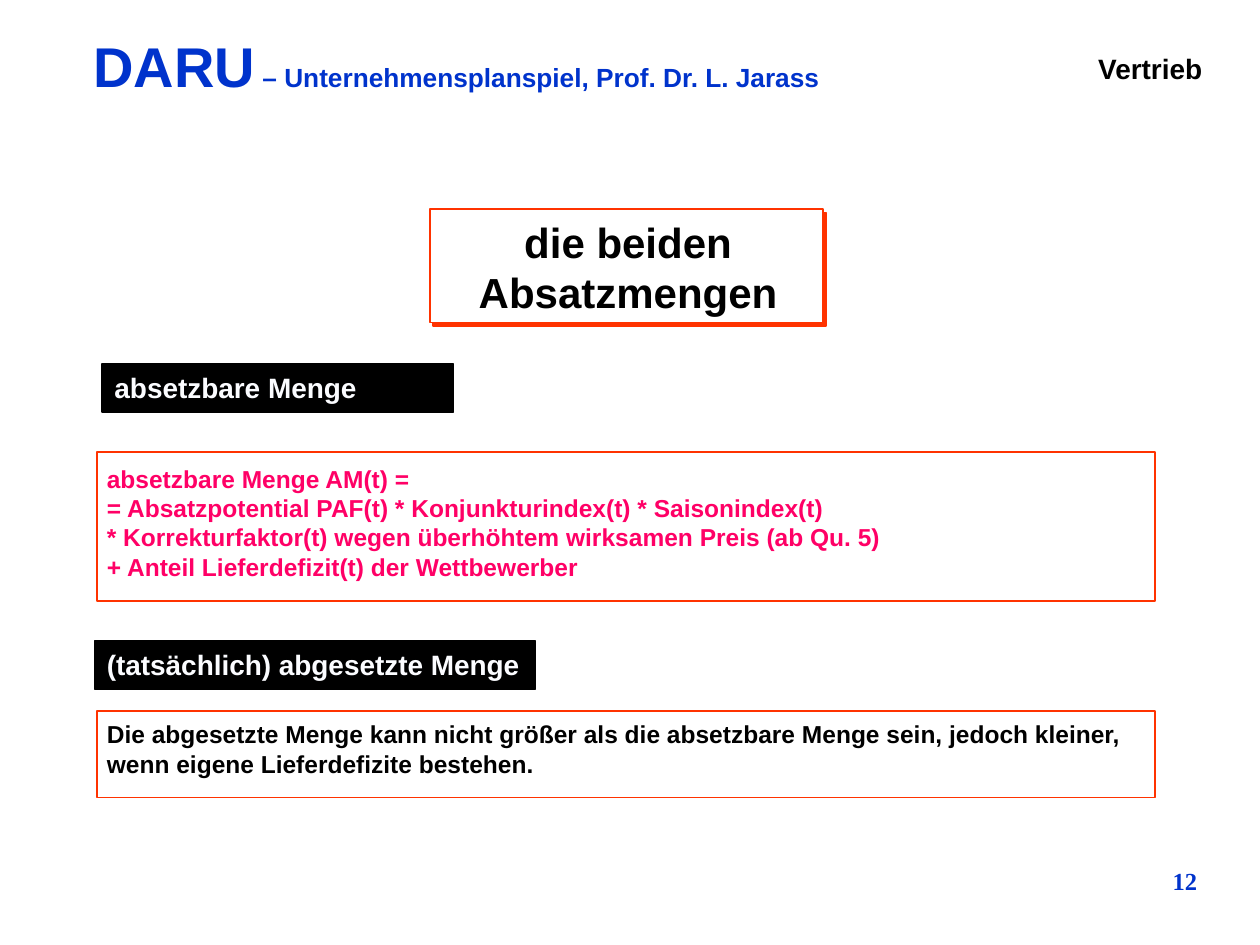
from dataclasses import dataclass

import pptx
import pptx.dml.color
import pptx.enum.shapes
import pptx.enum.text
import pptx.oxml
import pptx.oxml.ns
import pptx.util
from pptx.util import Inches

ALIGN = pptx.enum.text.PP_ALIGN
ANCHOR = pptx.enum.text.MSO_ANCHOR


@dataclass(frozen=True)
class Theme:
    blue: str = "0033CC"
    orange: str = "FF3300"
    pink: str = "FF0066"
    black: str = "000000"
    white: str = "FFFFFF"
    label_text: str = "FBFCFF"
    sans: str = "Arial"
    serif: str = "Times New Roman"
    title: int = 32
    heading: int = 24
    label: int = 16
    subtitle: int = 15
    body: int = 14


theme = Theme()


def add_rectangle(left, top, width, height, fill, line):
    shape = slide.shapes.add_shape(
        pptx.enum.shapes.MSO_SHAPE.RECTANGLE,
        Inches(left), Inches(top), Inches(width), Inches(height))
    shape.shadow.inherit = False
    shape.fill.solid()
    shape.fill.fore_color.rgb = pptx.dml.color.RGBColor.from_string(fill)
    shape.line.color.rgb = pptx.dml.color.RGBColor.from_string(line)
    shape.line.width = pptx.util.Pt(1)
    return shape


def write_text(shape, paragraphs, size, color, align=ALIGN.LEFT,
               font=theme.sans, anchor=ANCHOR.TOP):
    """Fill a shape with bold paragraphs; a newline inside one is a line break."""
    frame = shape.text_frame
    frame.word_wrap = True
    frame.vertical_anchor = anchor
    for index, text in enumerate(paragraphs):
        paragraph = frame.add_paragraph() if index else frame.paragraphs[0]
        paragraph.text = text
        paragraph.alignment = align
        paragraph.font.name = font
        paragraph.font.size = pptx.util.Pt(size)
        paragraph.font.bold = True
        paragraph.font.color.rgb = pptx.dml.color.RGBColor.from_string(color)


presentation = pptx.Presentation()
presentation.slide_width = Inches(10)
presentation.slide_height = Inches(7.5)
slide = presentation.slides.add_slide(presentation.slide_layouts[6])

# Header: large game name followed by a smaller subtitle
header = slide.shapes.add_textbox(Inches(0.74), Inches(0.12), Inches(6.2), Inches(0.67))
write_text(header, ["DARU"], theme.title, theme.blue)
header.text_frame.margin_left = header.text_frame.margin_right = 0
header.text_frame.margin_top = header.text_frame.margin_bottom = 0
header_line = header.text_frame.paragraphs[0]
header_line.line_spacing = 1.25
subtitle = header_line.add_run()
subtitle.text = " – Unternehmensplanspiel, Prof. Dr. L. Jarass"
subtitle.font.size = pptx.util.Pt(theme.subtitle)

section = slide.shapes.add_textbox(Inches(8.54), Inches(0.36), Inches(1.1), Inches(0.37))
write_text(section, ["Vertrieb"], theme.label, theme.black, ALIGN.RIGHT)

page_number = slide.shapes.add_textbox(Inches(7.52), Inches(6.74), Inches(2.08), Inches(0.5))
write_text(page_number, ["12"], theme.body, theme.blue, ALIGN.RIGHT,
           theme.serif, ANCHOR.MIDDLE)

# Heading box with a hard offset shadow
heading_box = add_rectangle(3.41, 1.66, 3.12, 0.9, theme.white, theme.orange)
effects = heading_box._element.spPr.find(pptx.oxml.ns.qn("a:effectLst"))
effects.append(pptx.oxml.parse_xml(
    f'<a:outerShdw {pptx.oxml.ns.nsdecls("a")} blurRad="0" dist="35560" '
    f'dir="2700000" algn="ctr" rotWithShape="0">'
    f'<a:srgbClr val="{theme.orange}"/></a:outerShdw>'))
heading = slide.shapes.add_textbox(Inches(3.7), Inches(1.67), Inches(2.57), Inches(0.9))
write_text(heading, ["die beiden", "Absatzmengen"], theme.heading, theme.black, ALIGN.CENTER)

# Black labels
for left, top, width, text in [
    (0.81, 2.89, 2.79, "absetzbare Menge"),
    (0.75, 5.09, 3.5, "(tatsächlich) abgesetzte Menge"),
]:
    label = add_rectangle(left, top, width, 0.38, theme.black, theme.black)
    write_text(label, [text], theme.label, theme.label_text)

# Framed explanations: frame top and height, text top and height
formula = "\n".join([
    "absetzbare Menge AM(t) =",
    "= Absatzpotential PAF(t) * Konjunkturindex(t) * Saisonindex(t)",
    "* Korrekturfaktor(t) wegen überhöhtem wirksamen Preis (ab Qu. 5)",
    "+ Anteil Lieferdefizit(t) der Wettbewerber",
])
explanation = ("Die abgesetzte Menge kann nicht größer als die absetzbare Menge sein, "
               "jedoch kleiner, wenn eigene Lieferdefizite bestehen.")
for frame_top, frame_height, text_top, text_height, text, color in [
    (3.59, 1.18, 3.63, 1.03, formula, theme.pink),
    (5.64, 0.69, 5.66, 0.56, explanation, theme.black),
]:
    add_rectangle(0.77, frame_top, 8.4, frame_height, theme.white, theme.orange)
    body = slide.shapes.add_textbox(
        Inches(0.75), Inches(text_top), Inches(8.43), Inches(text_height))
    write_text(body, [text], theme.body, color)

presentation.save("out.pptx")
